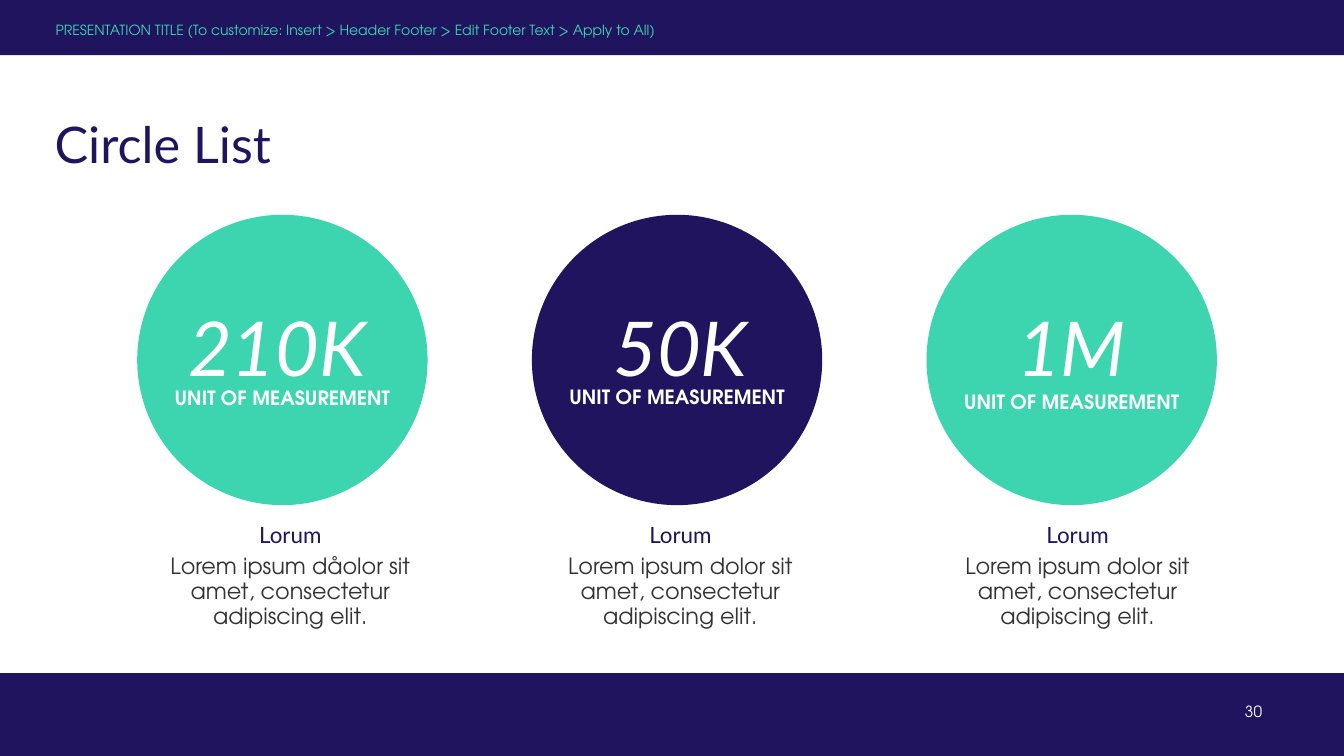
from dataclasses import dataclass

from pptx import Presentation
from pptx.dml.color import RGBColor
from pptx.enum.shapes import MSO_SHAPE as Shape
from pptx.enum.text import MSO_ANCHOR as Anchor, PP_ALIGN as Align
from pptx.util import Pt

COLORS = {
    "band": "21145F",
    "navy": "20145E",
    "mint": "3CD5AF",
    "white": "FFFFFF",
    "gray": "333333",
}
HEADING, BODY = "Lato", "TeX Gyre Adventor"
WIDTH, HEIGHT = 960, 540
CIRCLE_SIZE, CIRCLE_LEFT, CIRCLE_TOP, CIRCLE_STEP = 207.4, 98, 153.4, 281.9


@dataclass
class Column:
    fill: str
    value: str
    body: str
    value_center: float
    unit_top: float
    caption_center: float


COLUMNS = [
    Column("mint", "210K", "Lorem ipsum dåolor sit amet, consectetur adipiscing elit.",
           198, 272.2, 207.4),
    Column("navy", "50K", "Lorem ipsum dolor sit amet, consectetur adipiscing elit.",
           486, 271.4, 486),
    Column("mint", "1M", "Lorem ipsum dolor sit amet, consectetur adipiscing elit.",
           765.4, 275, 769.7),
]

prs = Presentation()
prs.slide_width, prs.slide_height = Pt(WIDTH), Pt(HEIGHT)
s = prs.slides.add_slide(prs.slide_layouts[6])


def rgb(name: str) -> RGBColor:
    return RGBColor.from_string(COLORS[name])


def add_solid(kind: Shape, left: float, top: float, width: float, height: float,
              color: str) -> None:
    sp = s.shapes.add_shape(kind, Pt(left), Pt(top), Pt(width), Pt(height))
    sp.shadow.inherit = False
    sp.fill.solid()
    sp.fill.fore_color.rgb = rgb(color)
    sp.line.fill.background()


def add_text(text: str, left: float, top: float, width: float, height: float, *,
             size: float, color: str, font: str = BODY, align: Align = Align.LEFT,
             anchor: Anchor = Anchor.TOP, bold: bool = False, italic: bool = False,
             wrap: bool = True, inset_x: float = 0, inset_y: float = 0,
             spacing: float | Pt | None = None) -> None:
    sp = s.shapes.add_textbox(Pt(left), Pt(top), Pt(width), Pt(height))
    tf = sp.text_frame
    tf.word_wrap = wrap
    tf.vertical_anchor = anchor
    tf.margin_left = tf.margin_right = Pt(inset_x)
    tf.margin_top = tf.margin_bottom = Pt(inset_y)
    p = tf.paragraphs[0]
    p.alignment = align
    p.line_spacing = spacing
    r = p.add_run()
    r.text = text
    r.font.name, r.font.size = font, Pt(size)
    r.font.bold, r.font.italic = bold, italic
    r.font.color.rgb = rgb(color)


def add_centered(text: str, center: float, top: float, width: float, height: float,
                 **style) -> None:
    add_text(text, center - width / 2, top, width, height,
             align=Align.CENTER, inset_y=3.6, **style)


def add_column(index: int, col: Column) -> None:
    left = CIRCLE_LEFT + index * CIRCLE_STEP
    center = left + CIRCLE_SIZE / 2
    # Circle with its figure and unit
    add_solid(Shape.OVAL, left, CIRCLE_TOP, CIRCLE_SIZE, CIRCLE_SIZE, col.fill)
    add_centered(col.value, col.value_center, 211.7, 164.2, 72.7, size=54,
                 color="white", font=HEADING, italic=True, inset_x=7.2)
    add_centered("UNIT OF MEASUREMENT", center, col.unit_top, 169.2, 24.5, size=14,
                 color="white", bold=True, wrap=False, inset_x=7.2)
    # Caption below the circle
    add_centered("Lorum", col.caption_center, 368.6, 164.2, 26.6, size=16,
                 color="navy", font=HEADING, inset_x=7.2)
    add_centered(col.body, col.caption_center, 391.7, 182.9, 61.9, size=16,
                 color="gray", spacing=Pt(18))


# Header and footer bands
add_solid(Shape.RECTANGLE, 0, 0, WIDTH, 39.4, "band")
add_solid(Shape.RECTANGLE, 0, 480.8, WIDTH, HEIGHT - 480.8, "band")
add_text("PRESENTATION TITLE (To customize: Insert > Header Footer > "
         "Edit Footer Text > Apply to All)",
         39.8, 7.2, 832.3, 28.8, size=10, color="mint", anchor=Anchor.MIDDLE)
add_text("30", 686.9, 501.8, 214.6, 17.3, size=11, color="white", align=Align.RIGHT)

# Title
add_text("Circle List", 39, 85.7, 794.9, 78.5, size=36, color="navy",
         font=HEADING, spacing=0.9)

# Circle list
for i, column in enumerate(COLUMNS):
    add_column(i, column)

prs.save("out.pptx")
